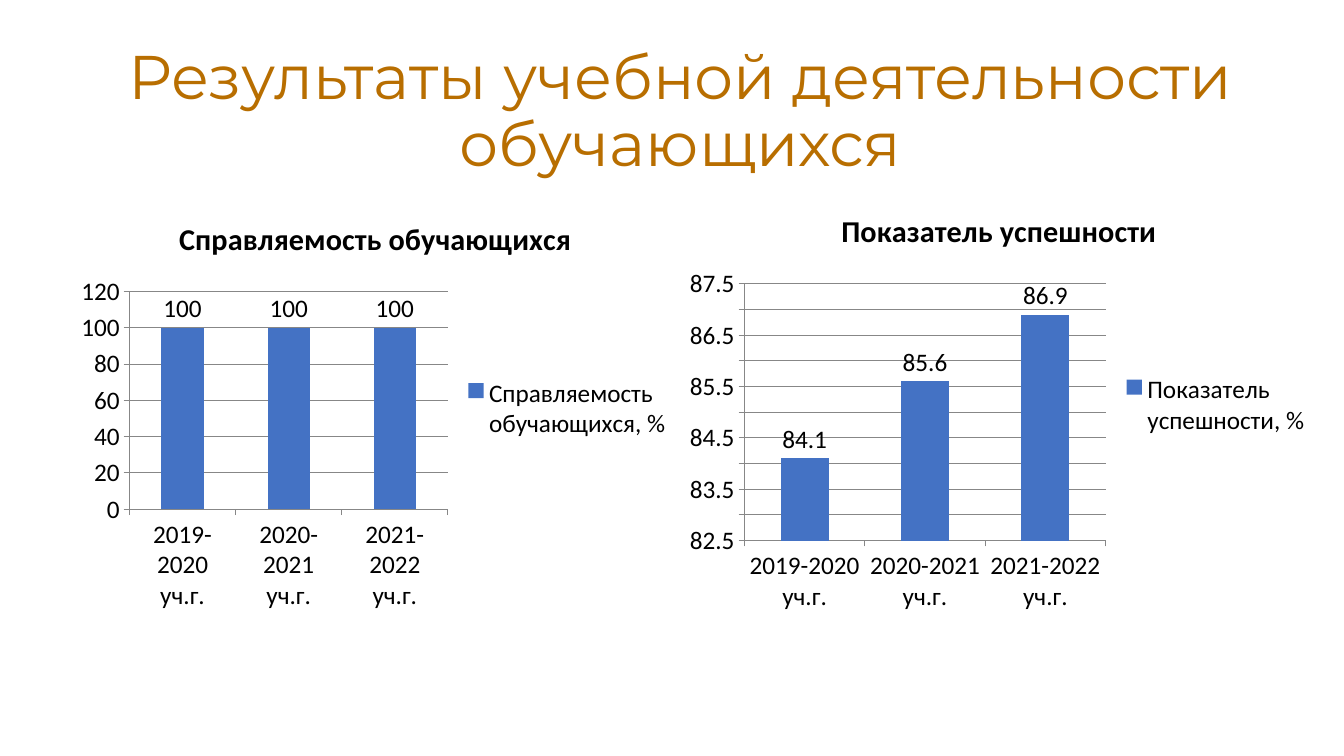
from dataclasses import dataclass

from pptx import Presentation
from pptx import util as u
from pptx.chart import data as cd
from pptx.dml.color import RGBColor
from pptx.enum import chart as ch, text


@dataclass(frozen=True)
class Theme:
    title_font: str = "Montserrat"
    body_font: str = "Calibri"
    title_size: float = 44
    chart_title_size: float = 21.6
    chart_size: float = 18
    title_color: str = "B86E00"
    text_color: str = "000000"
    bar_color: str = "4472C4"
    line_color: str = "878787"


def px(n):
    return u.Emu(round(n * 914400 / 100.8))


def apply(target, values):
    for name, value in values.items():
        setattr(target, name, value)


class Deck:
    def __init__(self, theme):
        self.theme = theme
        self.prs = Presentation()
        apply(self.prs, {"slide_width": px(1344), "slide_height": px(756)})
        self.slide = self.prs.slides.add_slide(self.prs.slide_layouts[6])

    def font(self, font, name, size, color, bold=False):
        apply(font, {"name": name, "size": u.Pt(size), "bold": bold})
        font.color.rgb = RGBColor.from_string(color)

    def line(self, fmt):
        fmt.line.width = u.Pt(0.75)
        fmt.line.color.rgb = RGBColor.from_string(self.theme.line_color)

    def title(self, words, box):
        t = self.theme
        tf = self.slide.shapes.add_textbox(*map(px, box)).text_frame
        apply(tf, {"word_wrap": True, "vertical_anchor": text.MSO_ANCHOR.MIDDLE})
        p = tf.paragraphs[0]
        apply(p, {"alignment": text.PP_ALIGN.CENTER, "line_spacing": 0.9})
        r = p.add_run()
        r.text = words
        self.font(r.font, t.title_font, t.title_size, t.title_color)

    def columns(self, heading, name, cats, vals, box, scale):
        t = self.theme
        data = cd.CategoryChartData()
        data.categories = cats
        data.add_series(name, vals)
        chart = self.slide.shapes.add_chart(
            ch.XL_CHART_TYPE.COLUMN_CLUSTERED, *map(px, box), data).chart
        self.font(chart.font, t.body_font, t.chart_size, t.text_color)

        apply(chart, {"has_title": True, "has_legend": True})
        chart.chart_title.include_in_layout = False
        p = chart.chart_title.text_frame.paragraphs[0]
        r = p.add_run()
        r.text = heading
        self.font(r.font, t.body_font, t.chart_title_size, t.text_color, True)
        apply(chart.legend, {"position": ch.XL_LEGEND_POSITION.RIGHT,
                             "include_in_layout": False})

        apply(chart.value_axis, scale)
        chart.value_axis.has_major_gridlines = True
        self.line(chart.value_axis.major_gridlines.format)
        for axis in (chart.category_axis, chart.value_axis):
            apply(axis, {"major_tick_mark": ch.XL_TICK_MARK.OUTSIDE,
                         "minor_tick_mark": ch.XL_TICK_MARK.NONE})
            self.line(axis.format)

        plot = chart.plots[0]
        apply(plot, {"gap_width": 150, "vary_by_categories": False,
                     "has_data_labels": True})
        apply(plot.data_labels, {"show_value": True,
                                 "position": ch.XL_LABEL_POSITION.OUTSIDE_END})
        self.font(plot.data_labels.font, t.body_font, t.chart_size, t.text_color)
        fill = plot.series[0].format.fill
        fill.solid()
        fill.fore_color.rgb = RGBColor.from_string(t.bar_color)


def main():
    deck = Deck(Theme())
    deck.title("Результаты учебной деятельности обучающихся", (101, 40, 1159, 146))
    years = [f"{y}-{y + 1} уч.г." for y in range(2019, 2022)]
    deck.columns("Справляемость обучающихся", "Справляемость обучающихся, %",
                 years, (100, 100, 100), (69, 198, 613, 421),
                 {"minimum_scale": 0, "maximum_scale": 120, "major_unit": 20})
    deck.columns("Показатель успешности", "Показатель успешности, %",
                 years, (84.1, 85.6, 86.9), (677, 190, 644, 430),
                 {"minimum_scale": 82.5, "maximum_scale": 87.5, "major_unit": 0.5})
    deck.prs.save("out.pptx")


if __name__ == "__main__":
    main()
